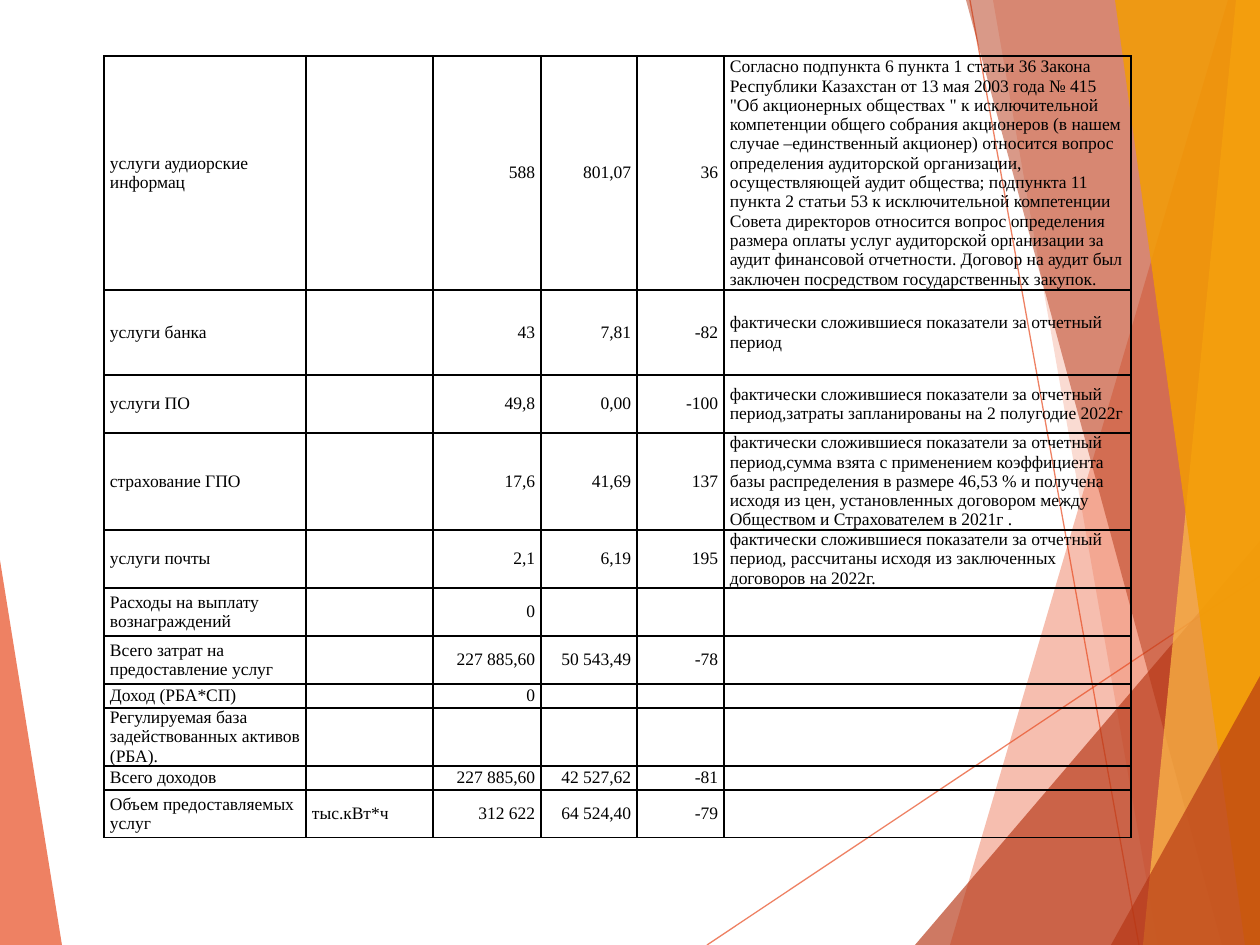
from dataclasses import dataclass
from typing import NamedTuple

from lxml.etree import SubElement
from pptx import Presentation
from pptx.dml.color import RGBColor
from pptx.enum.shapes import MSO_CONNECTOR
from pptx.enum.text import MSO_ANCHOR, PP_ALIGN
from pptx.oxml.ns import qn
from pptx.util import Emu, Pt

PX = 914400 / 126  # EMU per px
WIDTH, HEIGHT = 1260, 945


@dataclass(frozen=True)
class Theme:
    text: str = "000000"
    border: str = "000000"
    orange: str = "E84C22"
    rust: str = "B53513"
    sand: str = "FFBD47"
    amber: str = "F49D00"
    font: str = "Times New Roman"
    size: Pt = Pt(10)
    border_width: Pt = Pt(1)
    ray_width: Pt = Pt(0.75)


THEME = Theme()


class Facet(NamedTuple):
    color: str
    opacity: int
    points: list[tuple[int, int]]


class Ray(NamedTuple):
    start: tuple[int, int]
    end: tuple[int, int]


class Expense(NamedTuple):
    name: str
    unit: str = ""
    plan: str = ""
    fact: str = ""
    deviation: str = ""
    reason: str = ""
    height: int = 48


def px(length: int) -> Emu:
    return Emu(round(length * PX))


def right_facet(color: str, opacity: int, top: tuple[int, int], foot: int) -> Facet:
    """A facet between a slanted edge and the right side of the slide."""
    points = [top, (foot, HEIGHT), (WIDTH, HEIGHT)]
    if top[0] < WIDTH:
        points.append((WIDTH, 0))
    return Facet(color, opacity, points)


LEFT_FACET = Facet(THEME.orange, 70, [(0, 560), (62, HEIGHT), (0, HEIGHT)])
RAYS = [Ray((707, HEIGHT), (WIDTH, 576)), Ray((970, 0), (1139, HEIGHT))]
RIGHT_FACETS = [
    right_facet(THEME.orange, 36, (1228, 0), 950),
    right_facet(THEME.orange, 20, (993, 0), 1158),
    right_facet(THEME.rust, 66, (WIDTH, 541), 915),
    right_facet(THEME.rust, 50, (966, 0), 1222),
    right_facet(THEME.sand, 70, (1236, 0), 1143),
    right_facet(THEME.amber, 82, (1115, 0), 1245),
    right_facet(THEME.rust, 66, (WIDTH, 676), 1111),
]

TABLE_LEFT, TABLE_TOP = 104, 56
COLUMN_WIDTHS = [202, 127, 108, 96, 87, 407]
NUMBER_COLUMNS = (2, 3, 4)
CELL_INSET = 6

EXPENSES = [
    Expense("услуги аудиорские информац", "", "588", "801,07", "36",
            "Согласно подпункта 6 пункта 1 статьи 36 Закона Республики Казахстан от 13 мая 2003 года "
            "№ 415 \"Об акционерных обществах \" к исключительной компетенции общего собрания акционеров "
            "(в нашем случае –единственный акционер) относится вопрос определения аудиторской "
            "организации, осуществляющей аудит общества; подпункта 11 пункта 2 статьи 53 к "
            "исключительной компетенции Совета директоров относится вопрос определения размера оплаты "
            "услуг аудиторской организации за аудит финансовой отчетности. Договор на аудит был "
            "заключен посредством государственных закупок.", 234),
    Expense("услуги банка", "", "43", "7,81", "-82",
            "фактически сложившиеся показатели за отчетный период", 85),
    Expense("услуги ПО", "", "49,8", "0,00", "-100",
            "фактически сложившиеся показатели за отчетный период,затраты запланированы "
            "на 2 полугодие 2022г ", 58),
    Expense("страхование ГПО", "", "17,6", "41,69", "137",
            "фактически сложившиеся показатели за отчетный период,сумма взята с применением "
            "коэффициента базы распределения в размере 46,53 % и получена исходя из цен, "
            "установленных договором между Обществом и Страхователем в 2021г .", 97),
    Expense("услуги почты", "", "2,1", "6,19", "195",
            "фактически сложившиеся показатели за отчетный период, рассчитаны исходя из "
            "заключенных договоров на 2022г.", 58),
    Expense("Расходы на выплату вознаграждений", plan="0"),
    Expense("Всего затрат на предоставление услуг", "", "227 885,60", "50 543,49", "-78"),
    Expense("Доход (РБА*СП)", plan="0", height=24),
    Expense("Регулируемая база задействованных активов (РБА).", height=58),
    Expense("Всего доходов", "", "227 885,60", "42 527,62", "-81", height=24),
    Expense("Объем предоставляемых услуг", "тыс.кВт*ч", "312 622", "64 524,40", "-79"),
]


def set_opacity(element, percent: int) -> None:
    color = next(element.iter(qn("a:srgbClr")))
    SubElement(color, qn("a:alpha")).set("val", str(percent * 1000))


def draw_facet(slide, facet: Facet) -> None:
    first, *rest = facet.points
    builder = slide.shapes.build_freeform(*first, scale=PX)
    builder.add_line_segments(rest, close=True)
    shape = builder.convert_to_shape()
    shape.shadow.inherit = False
    shape.fill.solid()
    shape.fill.fore_color.rgb = RGBColor.from_string(facet.color)
    set_opacity(shape.element.spPr, facet.opacity)
    shape.line.fill.background()


def draw_ray(slide, ray: Ray) -> None:
    line = slide.shapes.add_connector(
        MSO_CONNECTOR.STRAIGHT, *map(px, ray.start + ray.end))
    line.line.color.rgb = RGBColor.from_string(THEME.orange)
    line.line.width = THEME.ray_width
    properties = line.element.spPr
    set_opacity(properties, 70)
    SubElement(properties, qn("a:effectLst"))


def draw_borders(cell) -> None:
    properties = cell._tc.get_or_add_tcPr()
    for index, side in enumerate(("a:lnL", "a:lnR", "a:lnT", "a:lnB")):
        border = properties.makeelement(qn(side), {"w": str(THEME.border_width)})
        fill = SubElement(border, qn("a:solidFill"))
        SubElement(fill, qn("a:srgbClr")).set("val", THEME.border)
        properties.insert(index, border)


def fill_cell(cell, text: str, align: PP_ALIGN) -> None:
    cell.fill.background()
    draw_borders(cell)
    cell.vertical_anchor = MSO_ANCHOR.MIDDLE
    cell.margin_left = cell.margin_right = px(CELL_INSET)
    cell.margin_top = cell.margin_bottom = 0
    cell.text = text
    paragraph = cell.text_frame.paragraphs[0]
    paragraph.alignment = align
    paragraph.font.name = THEME.font
    paragraph.font.size = THEME.size
    paragraph.font.color.rgb = RGBColor.from_string(THEME.text)
    if not text:  # keeps empty cells from stretching their row
        end = SubElement(paragraph._p, qn("a:endParaRPr"))
        end.set("sz", str(int(THEME.size.pt * 100)))


def draw_expenses(slide, expenses: list[Expense]) -> None:
    frame = slide.shapes.add_table(
        len(expenses), len(COLUMN_WIDTHS), px(TABLE_LEFT), px(TABLE_TOP),
        px(sum(COLUMN_WIDTHS)), px(sum(e.height for e in expenses)))
    table = frame.table
    table.first_row = table.horz_banding = False
    for column, width in zip(table.columns, COLUMN_WIDTHS):
        column.width = px(width)
    for row, expense in zip(table.rows, expenses):
        row.height = px(expense.height)
        for index, (cell, text) in enumerate(zip(row.cells, expense[:-1])):
            align = PP_ALIGN.RIGHT if index in NUMBER_COLUMNS else PP_ALIGN.LEFT
            fill_cell(cell, text, align)


def main() -> None:
    deck = Presentation()
    deck.slide_width, deck.slide_height = px(WIDTH), px(HEIGHT)
    slide = deck.slides.add_slide(deck.slide_layouts[6])

    # Faceted backdrop
    draw_facet(slide, LEFT_FACET)
    for ray in RAYS:
        draw_ray(slide, ray)
    for facet in RIGHT_FACETS:
        draw_facet(slide, facet)

    # Expense table
    draw_expenses(slide, EXPENSES)

    deck.save("out.pptx")


if __name__ == "__main__":
    main()
